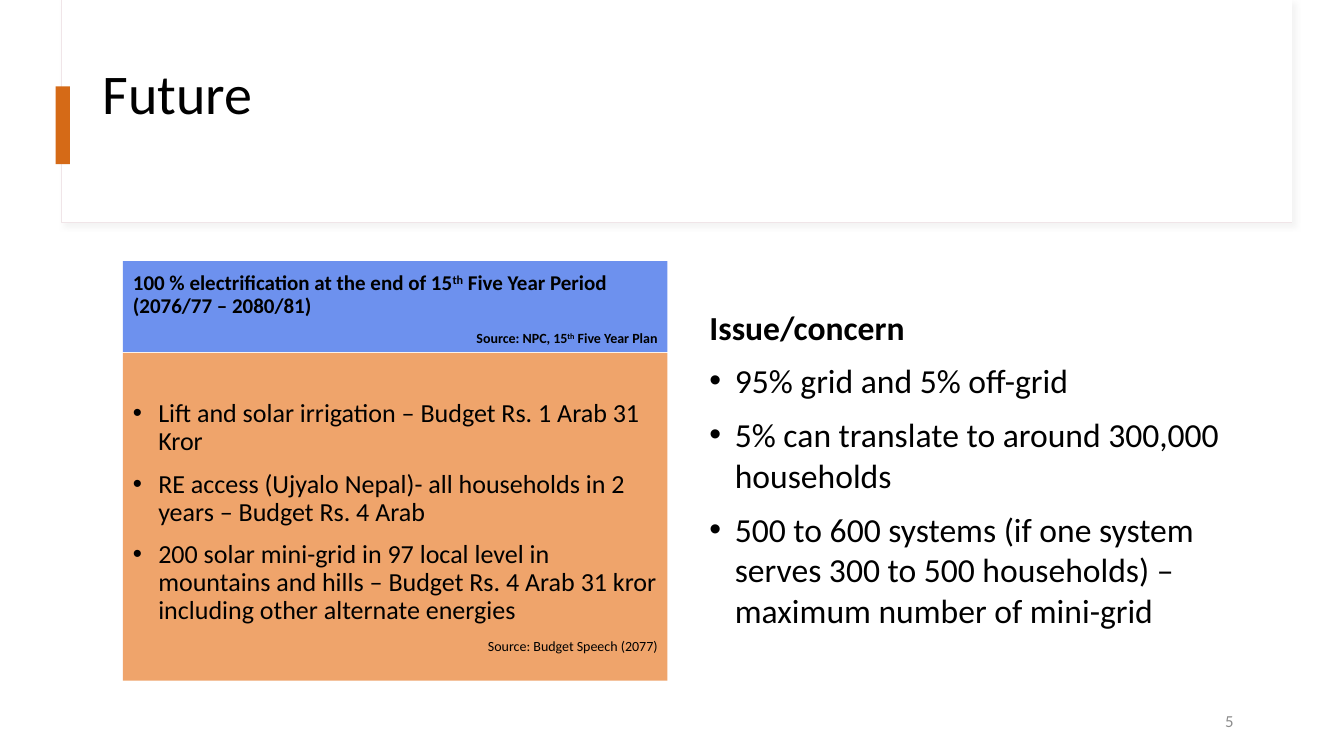
from dataclasses import dataclass

from lxml.etree import SubElement
from pptx import Presentation
from pptx.dml.color import RGBColor
from pptx.enum.shapes import MSO_SHAPE
from pptx.enum.text import MSO_ANCHOR, PP_ALIGN
from pptx.oxml.ns import qn
from pptx.util import Cm, Pt


@dataclass(frozen=True)
class Theme:
    """Font, colours and type sizes of the slide."""
    font: str = "Calibri"
    white: str = "FFFFFF"
    text: str = "000000"
    muted: str = "8C8C8C"
    frame: str = "F0E5E8"
    shadow: str = "D9D9D9"
    accent: str = "D56A17"
    blue: str = "6D91EE"
    orange: str = "EFA46B"
    title: float = 40
    body: float = 24
    item: float = 18.6
    goal: float = 15
    number: float = 12
    source: float = 10


class Deck:
    """Holds the theme and the current slide and draws elements on it."""

    def __init__(self, prs, theme):
        """Add a blank slide to the presentation."""
        self.theme = theme
        self.s = prs.slides.add_slide(prs.slide_layouts[6])

    def rect(self, box, fill, line=None):
        """Draw a flat rectangle with an optional thin outline."""
        sp = self.s.shapes.add_shape(MSO_SHAPE.RECTANGLE, *map(Cm, box))
        sp.shadow.inherit = False
        sp.fill.solid()
        sp.fill.fore_color.rgb = RGBColor.from_string(fill)
        if line:
            sp.line.color.rgb = RGBColor.from_string(line)
            sp.line.width = Pt(0.75)
        else:
            sp.line.fill.background()
        return sp

    def soft_shadow(self, sp):
        """Give a shape a faint shadow to the lower right."""
        effects = sp._element.spPr.find(qn("a:effectLst"))
        shadow = SubElement(effects, qn("a:outerShdw"), blurRad=str(Pt(4)),
                            dist=str(Pt(3)), dir="2700000")
        color = SubElement(shadow, qn("a:srgbClr"), val=self.theme.shadow)
        SubElement(color, qn("a:alpha"), val="30000")

    def text(self, box, anchor=MSO_ANCHOR.TOP, fill=None, top=0.13):
        """Add a wrapping text box and return its text frame."""
        sp = self.s.shapes.add_textbox(*map(Cm, box))
        if fill:
            sp.fill.solid()
            sp.fill.fore_color.rgb = RGBColor.from_string(fill)
        tf = sp.text_frame
        tf.word_wrap = True
        tf.vertical_anchor = anchor
        tf.margin_top = Cm(top)
        return tf

    def para(self, tf, runs, size, bold=False, color=None, spacing=1.0,
             before=10, align=PP_ALIGN.LEFT, bullet=False):
        """Write one paragraph; every second run is a superscript."""
        p = tf.paragraphs[0]
        if p.runs:
            p = tf.add_paragraph()
        p.alignment = align
        p.line_spacing = spacing
        p.space_before = Pt(before)
        if bullet:
            pPr = p._p.get_or_add_pPr()
            pPr.set("marL", str(Cm(0.64)))
            pPr.set("indent", str(-Cm(0.64)))
            SubElement(pPr, qn("a:buFont"), typeface="Arial")
            SubElement(pPr, qn("a:buChar"), char="•")
        for i, words in enumerate(runs):
            r = p.add_run()
            r.text = words
            r.font.name = self.theme.font
            r.font.size = Pt(size)
            r.font.bold = bold
            r.font.color.rgb = RGBColor.from_string(color or self.theme.text)
            if i % 2:
                r._r.get_or_add_rPr().set("baseline", "30000")


def main():
    """Build the slide and save it."""
    prs = Presentation()
    prs.slide_width, prs.slide_height = Cm(33.87), Cm(19.05)
    t = Theme()
    d = Deck(prs, t)

    d.soft_shadow(d.rect((1.55, 0, 31.01, 5.61), t.white, t.frame))
    d.rect((1.57, 0, 30.99, 5.59), t.white)
    d.rect((1.4, 2.18, 0.36, 1.96), t.accent)
    tf = d.text((2.34, 1.02, 29.21, 2.79), MSO_ANCHOR.MIDDLE)
    d.para(tf, ["Future"], t.title, spacing=0.9, before=0)

    left, right, width = 3.1, 17.63, 13.72
    head_top, head_height, body_height = 6.58, 2.29, 8.26

    tf = d.text((left, head_top, width, head_height), MSO_ANCHOR.BOTTOM, t.blue)
    d.para(tf, ["100 % electrification at the end of 15", "th",
                " Five Year Period (2076/77 – 2080/81)"],
           t.goal, bold=True, spacing=0.9)
    d.para(tf, ["Source: NPC, 15", "th", " Five Year Plan"],
           t.source, bold=True, spacing=0.9, align=PP_ALIGN.RIGHT)

    tf = d.text((left, 8.89, width, body_height), fill=t.orange, top=1.2)
    for item in (
        "Lift and solar irrigation – Budget Rs. 1 Arab 31 Kror",
        "RE access (Ujyalo Nepal)- all households in 2 years – Budget Rs. 4 Arab",
        "200 solar mini-grid in 97 local level in mountains and hills – "
        "Budget Rs. 4 Arab 31 kror including other alternate energies",
    ):
        d.para(tf, [item], t.item, spacing=0.9, bullet=True)
    d.para(tf, ["Source: Budget Speech (2077)"], t.source, spacing=0.9,
           align=PP_ALIGN.RIGHT)

    tf = d.text((right, head_top, width, head_height), MSO_ANCHOR.BOTTOM)
    d.para(tf, ["Issue/concern"], t.body, bold=True, spacing=1.1)

    tf = d.text((right, 8.94, width, body_height))
    for item in (
        "95% grid and 5% off-grid",
        "5% can translate to around 300,000 households",
        "500 to 600 systems (if one system serves 300 to 500 households) – "
        "maximum number of mini-grid",
    ):
        d.para(tf, [item], t.body, bullet=True)

    tf = d.text((23.72, 17.65, 7.62, 1.02), MSO_ANCHOR.MIDDLE)
    d.para(tf, ["5"], t.number, color=t.muted, before=0, align=PP_ALIGN.RIGHT)

    prs.save("out.pptx")


if __name__ == "__main__":
    main()
